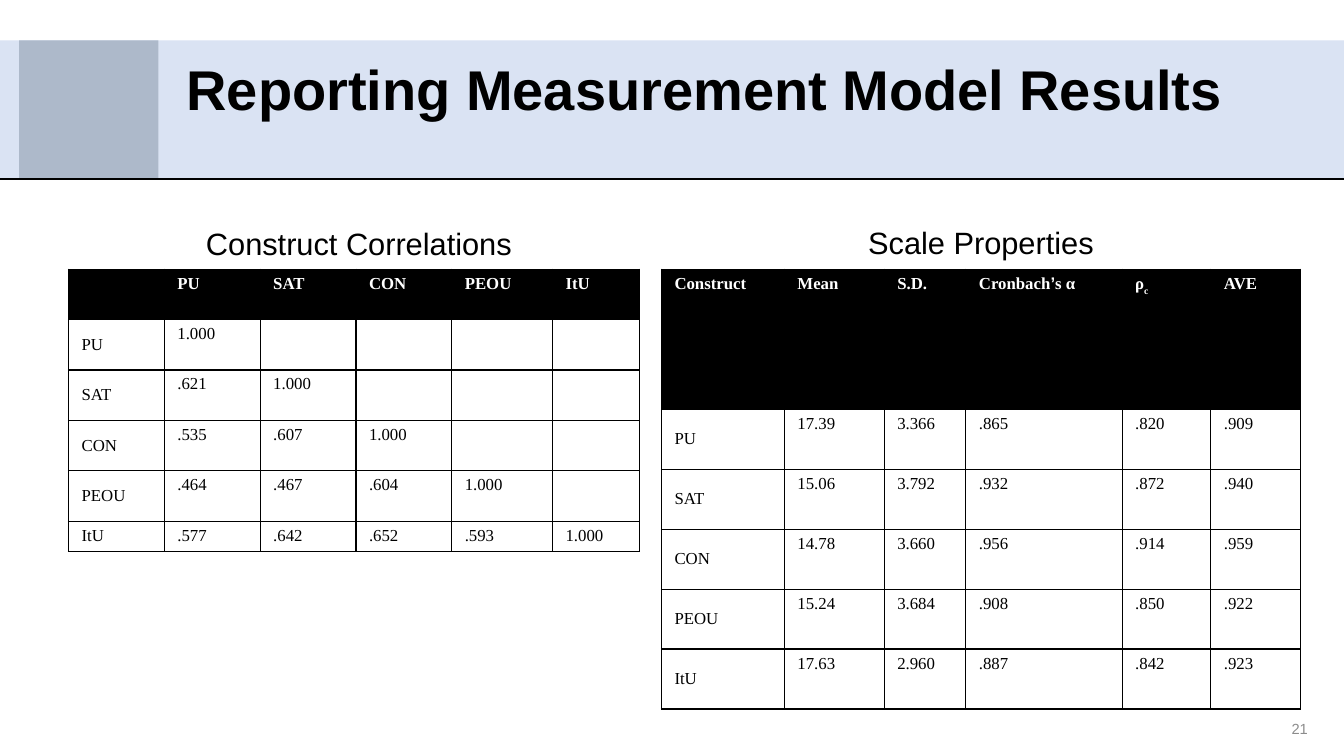
"""Build the measurement model results slide with its two tables."""
from lxml.etree import SubElement
from pptx import Presentation
from pptx.dml.color import RGBColor
from pptx.enum.shapes import MSO_CONNECTOR, MSO_SHAPE
from pptx.enum.text import MSO_ANCHOR as ANCHOR, PP_ALIGN as ALIGN
from pptx.oxml.ns import qn
from pptx.util import Inches, Pt

BLACK = RGBColor(0x00, 0x00, 0x00)
WHITE = RGBColor(0xFF, 0xFF, 0xFF)
PALE_BLUE = RGBColor(0xDA, 0xE3, 0xF3)
BLUE_GRAY = RGBColor(0xAD, 0xB9, 0xCA)
GRAY = RGBColor(0x8C, 0x8C, 0x8C)
SERIF = "Times New Roman"
SANS = "Arial"


def add_run(p, text, size, color, font=SANS, bold=False):
    r = p.add_run()
    r.text = text
    r.font.size = Pt(size)
    r.font.name = font
    r.font.bold = bold
    r.font.color.rgb = color
    return r


def add_grid(s, left, top, widths, heights, rows, body_fill):
    frame = s.shapes.add_table(len(rows), len(widths), Inches(left), Inches(top),
                               Inches(sum(widths)), Inches(sum(heights)))
    table = frame.table
    table.first_row = table.horz_banding = False
    for column, width in zip(table.columns, widths):
        column.width = Inches(width)
    for i, (height, values) in enumerate(zip(heights, rows)):
        table.rows[i].height = Inches(height)
        for j in range(len(widths)):
            cell = table.cell(i, j)
            cell.margin_left = cell.margin_right = Inches(0.13)
            cell.margin_top = cell.margin_bottom = Inches(0.05)
            if i and j == 0:
                cell.vertical_anchor = ANCHOR.MIDDLE
            tcPr = cell._tc.get_or_add_tcPr()
            for side in ("a:lnL", "a:lnR", "a:lnT", "a:lnB"):
                ln = SubElement(tcPr, qn(side), w=str(Pt(1)))
                fill = SubElement(ln, qn("a:solidFill"))
                SubElement(fill, qn("a:srgbClr"), val=str(BLACK))
            color = BLACK if i else WHITE
            fill_color = body_fill if i else BLACK
            if fill_color is None:
                cell.fill.background()
            else:
                cell.fill.solid()
                cell.fill.fore_color.rgb = fill_color
            if j >= len(values) or not values[j]:
                continue
            p = cell.text_frame.paragraphs[0]
            p.alignment = ALIGN.JUSTIFY
            pPr = p._p.get_or_add_pPr()
            pPr.set("marL", str(Inches(0.38)))
            pPr.set("indent", str(-Inches(0.38)))
            if values[j] == "ρc":
                add_run(p, "ρ", 12, color, SERIF, True)
                r = add_run(p, "c", 12, color, SERIF, True)
                r._r.get_or_add_rPr().set("baseline", "-30000")
                continue
            before, mark, after = values[j].partition("’")
            for text, font in ((before, SERIF), (mark, SANS), (after, SERIF)):
                if text:
                    add_run(p, text, 12, color, font, i == 0)


prs = Presentation()
prs.slide_width = Inches(13.33)
prs.slide_height = Inches(7.5)
s = prs.slides.add_slide(prs.slide_layouts[5])

for left, width, color in ((0, 13.33, PALE_BLUE), (0.19, 1.38, BLUE_GRAY)):
    sp = s.shapes.add_shape(MSO_SHAPE.RECTANGLE, Inches(left), Inches(0.4),
                            Inches(width), Inches(1.38))
    sp.shadow.inherit = False
    sp.fill.solid()
    sp.fill.fore_color.rgb = color
    sp.line.fill.background()

rule = s.shapes.add_connector(MSO_CONNECTOR.STRAIGHT, 0, Inches(1.78),
                              Inches(13.33), Inches(1.78))
rule.line.color.rgb = BLACK
rule.line.width = Pt(1.5)
SubElement(rule._element.spPr, qn("a:effectLst"))

title = s.shapes.title
s.shapes.element.append(title.element)
title.left, title.top = Inches(1.75), Inches(0.4)
title.width, title.height = Inches(11.58), Inches(0.95)
tf = title.text_frame
tf.word_wrap = True
tf.vertical_anchor = ANCHOR.MIDDLE
p = tf.paragraphs[0]
p.alignment = ALIGN.LEFT
add_run(p, "Reporting Measurement Model Results", 40, BLACK, bold=True)

labels = (
    ("Scale Properties", 7.46, 2.17, 4.54, 0.47, 22, BLACK, ALIGN.CENTER, ANCHOR.TOP),
    ("Construct Correlations", 1.29, 2.18, 4.54, 0.47, 22, BLACK, ALIGN.CENTER, ANCHOR.TOP),
    ("21", 11.3, 7.1, 1.77, 0.25, 10.5, GRAY, ALIGN.RIGHT, ANCHOR.MIDDLE),
)
for text, left, top, width, height, size, color, align, anchor in labels:
    sp = s.shapes.add_textbox(Inches(left), Inches(top), Inches(width), Inches(height))
    tf = sp.text_frame
    tf.word_wrap = True
    tf.vertical_anchor = anchor
    p = tf.paragraphs[0]
    p.alignment = align
    add_run(p, text, size, color)

correlations = (
    ("", "PU", "SAT", "CON", "PEOU", "ItU"),
    ("PU", "1.000"),
    ("SAT", ".621", "1.000"),
    ("CON", ".535", ".607", "1.000"),
    ("PEOU", ".464", ".467", ".604", "1.000"),
    ("ItU", ".577", ".642", ".652", ".593", "1.000"),
)
add_grid(s, 0.68, 2.67, (0.95, 0.95, 0.95, 0.95, 1, 0.86), [0.5] * 5 + [0.3],
         correlations, None)

properties = (
    ("Construct", "Mean", "S.D.", "Cronbach’s α", "ρc", "AVE"),
    ("PU", "17.39", "3.366", ".865", ".820", ".909"),
    ("SAT", "15.06", "3.792", ".932", ".872", ".940"),
    ("CON", "14.78", "3.660", ".956", ".914", ".959"),
    ("PEOU", "15.24", "3.684", ".908", ".850", ".922"),
    ("ItU", "17.63", "2.960", ".887", ".842", ".923"),
)
add_grid(s, 6.56, 2.67, (1.22, 0.99, 0.81, 1.55, 0.88, 0.89), [1.39] + [0.595] * 5,
         properties, WHITE)

prs.save("out.pptx")
